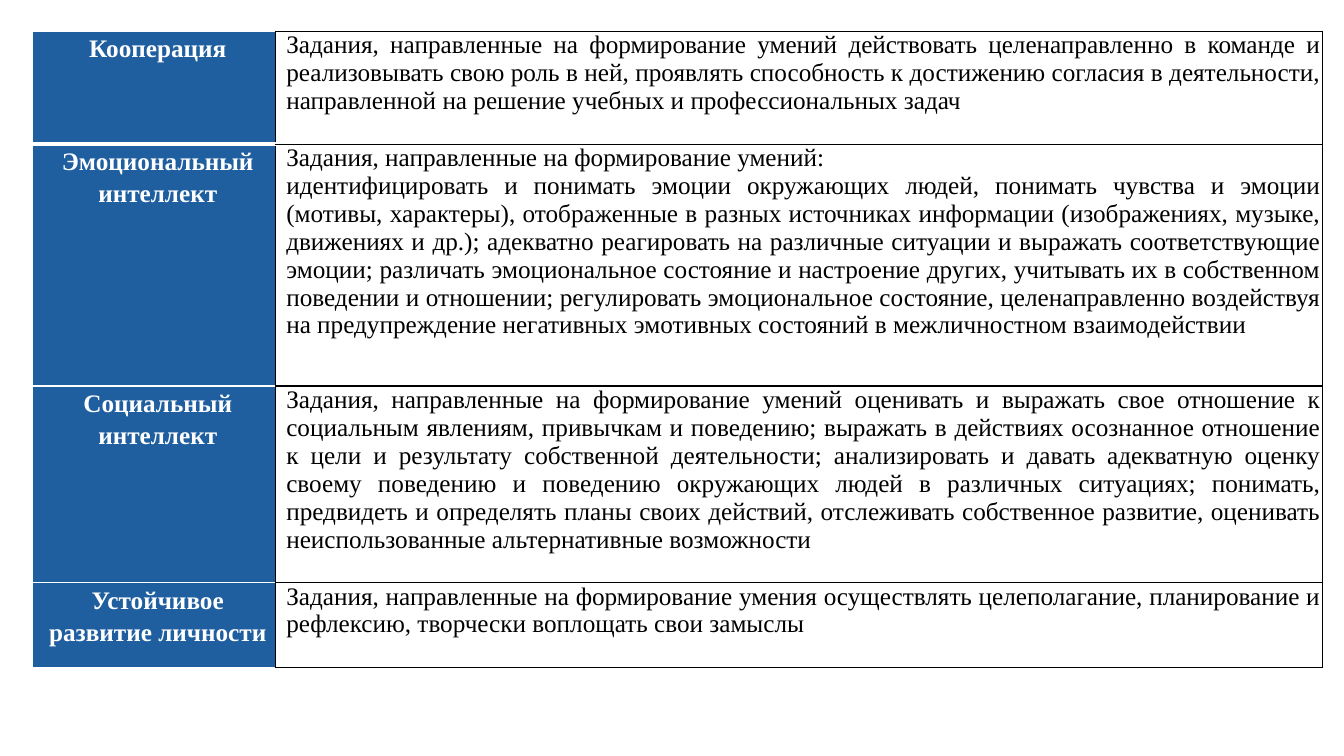
from lxml import etree
from pptx import Presentation
from pptx.dml.color import RGBColor
from pptx.enum.text import PP_ALIGN
from pptx.oxml.ns import qn
from pptx.util import Inches, Pt

CENTER, JUSTIFY = PP_ALIGN.CENTER, PP_ALIGN.JUSTIFY
BLUE = RGBColor(0x1F, 0x5F, 0xA0)
WHITE = RGBColor(0xFF, 0xFF, 0xFF)
BLACK = RGBColor(0x00, 0x00, 0x00)

COLUMN_WIDTHS = [2.41, 10.39]

# Row height, skill, paragraphs describing its tasks
SKILLS = [
    (1.12, "Кооперация", [
        "Задания, направленные на формирование умений действовать целенаправленно в команде и "
        "реализовывать свою роль в ней, проявлять способность к достижению согласия в деятельности, "
        "направленной на решение учебных и профессиональных задач"]),
    (2.4, "Эмоциональный интеллект", [
        "Задания, направленные на формирование умений:",
        "идентифицировать и понимать эмоции окружающих людей, понимать чувства и эмоции "
        "(мотивы, характеры), отображенные в разных источниках информации (изображениях, музыке, "
        "движениях и др.); адекватно реагировать на различные ситуации и выражать соответствующие "
        "эмоции; различать эмоциональное состояние и настроение других, учитывать их в собственном "
        "поведении и отношении; регулировать эмоциональное состояние, целенаправленно "
        "воздействуя на предупреждение негативных эмотивных состояний в межличностном "
        "взаимодействии"]),
    (1.95, "Социальный интеллект", [
        "Задания, направленные на формирование умений оценивать и выражать свое отношение к "
        "социальным явлениям, привычкам и поведению; выражать в действиях осознанное отношение "
        "к цели и результату собственной деятельности; анализировать и давать адекватную оценку "
        "своему поведению и поведению окружающих людей в различных ситуациях; понимать, "
        "предвидеть и определять планы своих действий, отслеживать собственное развитие, оценивать "
        "неиспользованные альтернативные возможности"]),
    (0.84, "Устойчивое развитие личности", [
        "Задания, направленные на формирование умения осуществлять целеполагание, планирование и "
        "рефлексию, творчески воплощать свои замыслы"]),
]


class SlideBuilder:
    def __init__(self, slide, font="Times New Roman", size=18):
        self.slide = slide
        self.font = font
        self.size = size

    def table(self, left, top, widths, heights):
        frame = self.slide.shapes.add_table(
            len(heights), len(widths), Inches(left), Inches(top),
            Inches(sum(widths)), Inches(sum(heights)))
        table = frame.table
        table.first_row = table.horz_banding = False
        for column, width in zip(table.columns, widths):
            column.width = Inches(width)
        for row, height in zip(table.rows, heights):
            row.height = Inches(height)
        return table

    def cell(self, cell, texts, fill, color, borders, align, indent, bold=False, spacing=1.0):
        cell.margin_left = cell.margin_right = Inches(0.02)
        cell.margin_top = cell.margin_bottom = 0
        self.borders(cell, borders)
        cell.fill.solid()
        cell.fill.fore_color.rgb = fill
        for index, text in enumerate(texts):
            frame = cell.text_frame
            paragraph = frame.add_paragraph() if index else frame.paragraphs[0]
            paragraph.alignment = align
            paragraph.line_spacing = spacing
            paragraph._p.get_or_add_pPr().set("marL", str(Inches(indent)))
            run = paragraph.add_run()
            run.text = text
            run.font.name = self.font
            run.font.size = Pt(self.size)
            run.font.bold = bold
            run.font.color.rgb = color

    def borders(self, cell, borders):
        properties = cell._tc.get_or_add_tcPr()
        for side, (color, width) in zip("LRTB", borders):
            line = etree.SubElement(properties, qn(f"a:ln{side}"), w=str(Pt(width)))
            fill = etree.SubElement(line, qn("a:solidFill"))
            etree.SubElement(fill, qn("a:srgbClr"), val=str(color))


def main():
    presentation = Presentation()
    presentation.slide_width = Inches(13.33)
    presentation.slide_height = Inches(7.5)
    slide = presentation.slides.add_slide(presentation.slide_layouts[6])
    builder = SlideBuilder(slide)

    # Table of skills and the tasks that build them
    table = builder.table(0.32, 0.31, COLUMN_WIDTHS, [height for height, _, _ in SKILLS])
    black, white, thick_white = (BLACK, 1), (WHITE, 1), (WHITE, 3)
    for row, (_, skill, tasks) in enumerate(SKILLS):
        top = thick_white if row == 1 else white
        bottom = thick_white if row == 0 else white
        builder.cell(table.cell(row, 0), [skill], BLUE, WHITE, [white, black, top, bottom],
                     CENTER, indent=0.08, bold=True, spacing=1.15)
        builder.cell(table.cell(row, 1), tasks, WHITE, BLACK, [black] * 4,
                     JUSTIFY, indent=0.09)

    presentation.save("out.pptx")


if __name__ == "__main__":
    main()
